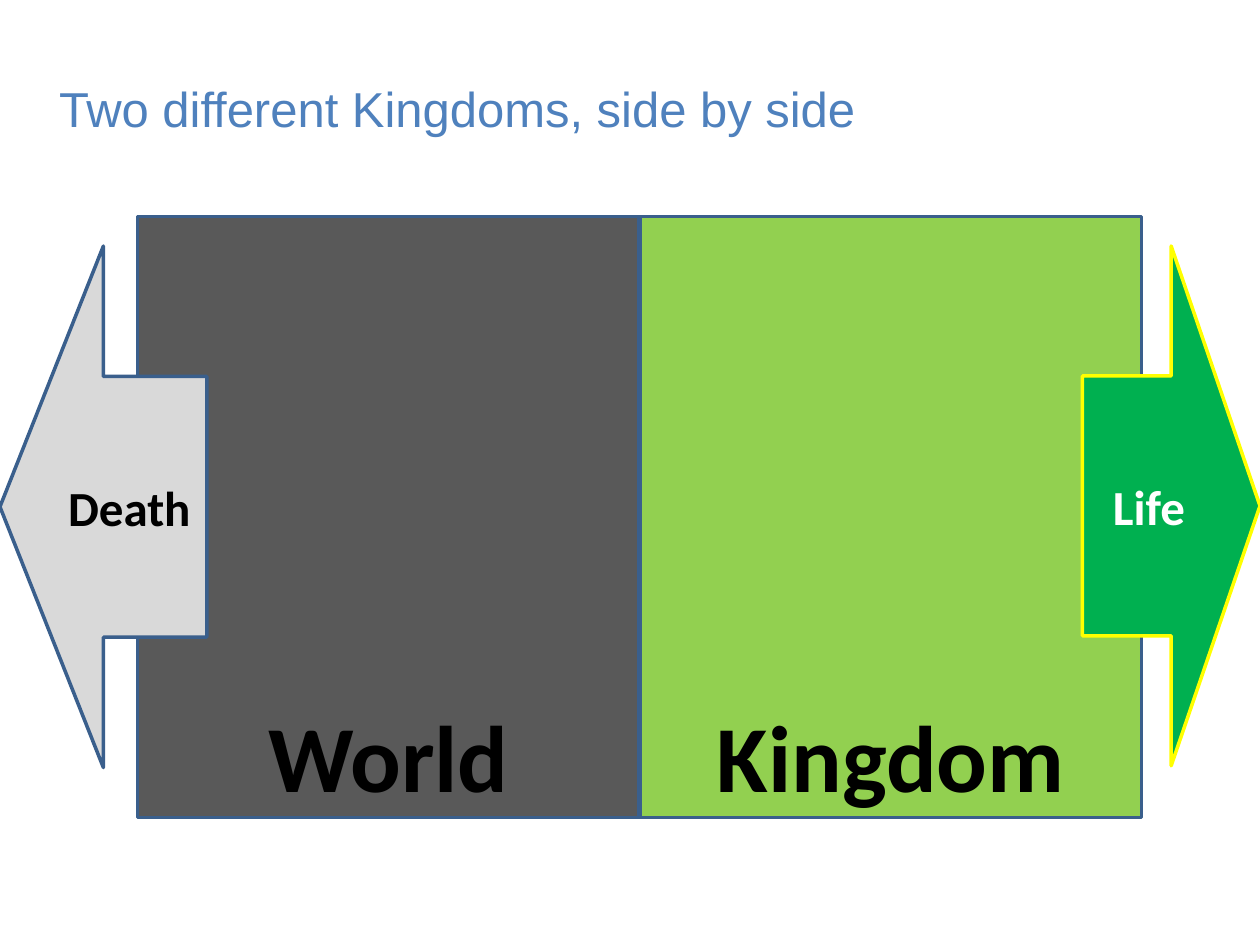
from pptx import Presentation
from pptx.dml.color import RGBColor
from pptx.enum.shapes import MSO_SHAPE as SHAPE
from pptx.enum.text import MSO_ANCHOR as ANCHOR, PP_ALIGN as ALIGN
from pptx.util import Pt

COLORS = {
    "title": "4F81BD", "outline": "3A5F8C", "yellow": "FFFF00",
    "world": "595959", "kingdom": "92D050", "death": "D9D9D9",
    "life": "00B050", "black": "000000", "white": "FFFFFF",
}


def rgb(name):
    return RGBColor.from_string(COLORS[name])


def write(shape, text, size, color, font="Calibri", bold=True,
          align=ALIGN.CENTER, anchor=ANCHOR.MIDDLE):
    tf = shape.text_frame
    tf.word_wrap = True
    tf.vertical_anchor = anchor
    p = tf.paragraphs[0]
    p.alignment = align
    r = p.add_run()
    r.text = text
    r.font.name, r.font.size, r.font.bold = font, Pt(size), bold
    r.font.color.rgb = rgb(color)


prs = Presentation()
prs.slide_width, prs.slide_height = Pt(720), Pt(540)
s = prs.slides.add_slide(prs.slide_layouts[5])

title = s.shapes.title
title.left, title.top, title.width, title.height = Pt(33.8), Pt(44.6), Pt(528.5), Pt(30.2)
tf = title.text_frame
tf.margin_left = tf.margin_top = tf.margin_right = tf.margin_bottom = 0
write(title, "Two different Kingdoms, side by side", 28, "title", font="Arial",
      bold=False, align=ALIGN.LEFT, anchor=ANCHOR.TOP)

# text, shape, (left, top, width, height), fill, line, size, text colour, anchor
blocks = [
    ("Kingdom", SHAPE.RECTANGLE, (365.7, 123.8, 286.6, 343.4),
     "kingdom", "outline", 54, "black", ANCHOR.BOTTOM),
    ("World", SHAPE.RECTANGLE, (78.7, 123.8, 286.6, 343.4),
     "world", "outline", 54, "black", ANCHOR.BOTTOM),
    ("Life", SHAPE.RIGHT_ARROW, (618.5, 140.6, 101.5, 297),
     "life", "yellow", 28, "white", ANCHOR.MIDDLE),
    ("Death", SHAPE.LEFT_ARROW, (0, 140.6, 118.2, 298),
     "death", "outline", 28, "black", ANCHOR.MIDDLE),
]
for text, kind, box, fill, line, size, color, anchor in blocks:
    sp = s.shapes.add_shape(kind, *map(Pt, box))
    sp.shadow.inherit = False
    sp.fill.solid()
    sp.fill.fore_color.rgb = rgb(fill)
    sp.line.color.rgb = rgb(line)
    sp.line.width = Pt(2)
    write(sp, text, size, color, anchor=anchor)

prs.save("out.pptx")
